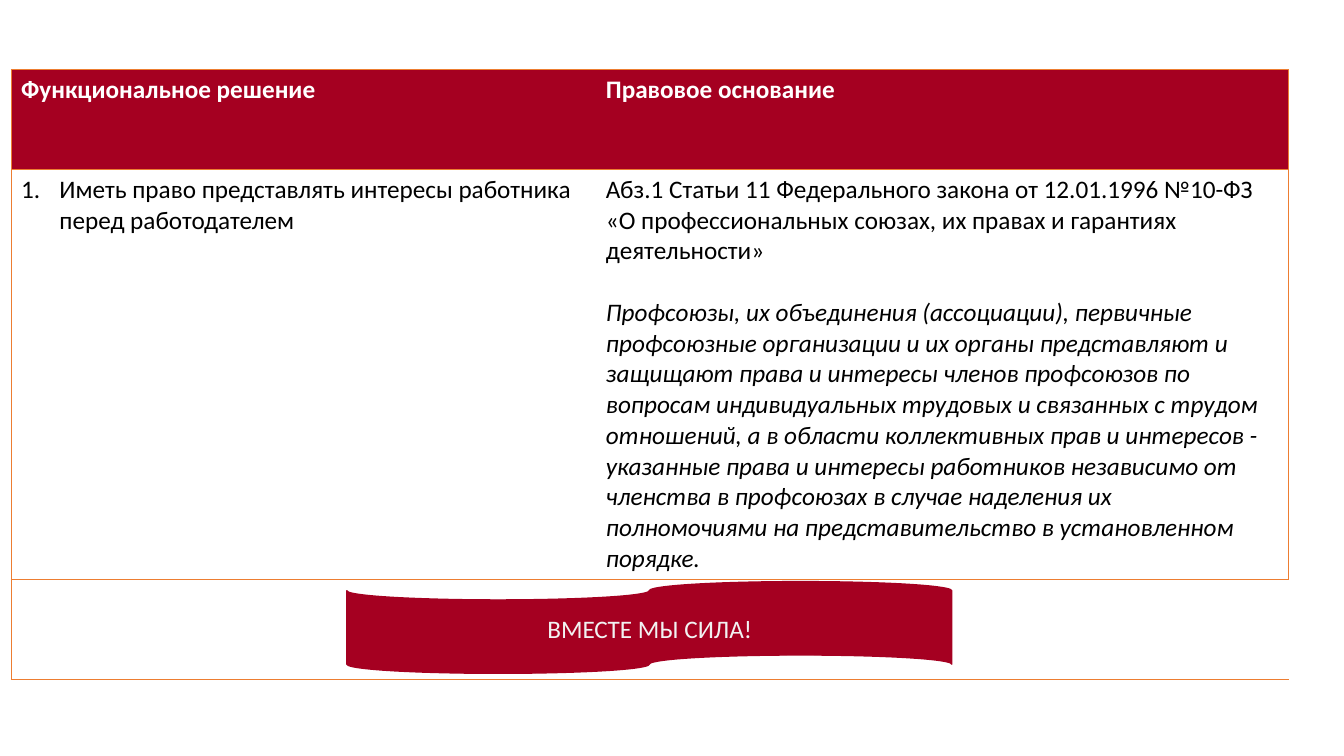
from dataclasses import dataclass

from lxml import etree
from pptx import Presentation
from pptx.dml.color import RGBColor
from pptx.enum.shapes import MSO_SHAPE
from pptx.enum.text import MSO_ANCHOR, PP_ALIGN
from pptx.oxml.ns import qn
from pptx.util import Inches, Pt

PUNCHED_TAPE = MSO_SHAPE.FLOWCHART_PUNCHED_TAPE
MIDDLE = MSO_ANCHOR.MIDDLE
LEFT = PP_ALIGN.LEFT
CENTER = PP_ALIGN.CENTER


@dataclass(frozen=True)
class Theme:
    font: str = "Calibri"
    text_size: float = 18
    crimson: str = "A50021"
    border: str = "ED7D31"
    border_width: float = 0.5
    white: str = "FFFFFF"
    black: str = "000000"
    pale: str = "F2F2F2"


class SlideBuilder:
    def __init__(self, slide, theme):
        self.slide = slide
        self.theme = theme

    def add_ribbon(self, left, top, width, height):
        shape = self.slide.shapes.add_shape(
            PUNCHED_TAPE, Inches(left), Inches(top), Inches(width), Inches(height)
        )
        shape.shadow.inherit = False
        shape.fill.solid()
        shape.fill.fore_color.rgb = RGBColor.from_string(self.theme.crimson)
        shape.line.color.rgb = RGBColor.from_string(self.theme.crimson)
        shape.line.width = Pt(1)

    def add_table(self, left, top, column_widths, row_heights):
        table = self.slide.shapes.add_table(
            len(row_heights), len(column_widths), Inches(left), Inches(top),
            Inches(sum(column_widths)), Inches(sum(row_heights)),
        ).table
        table.first_row = False
        table.horz_banding = False
        for column, width in zip(table.columns, column_widths):
            column.width = Inches(width)
        for row, height in zip(table.rows, row_heights):
            row.height = Inches(height)
        return table

    def style_cell(self, cell, edges, fill=None):
        properties = cell._tc.get_or_add_tcPr()
        for edge in "LRTB":
            line = etree.SubElement(properties, qn(f"a:ln{edge}"))
            if edge in edges:
                line.set("w", str(Pt(self.theme.border_width)))
                solid = etree.SubElement(line, qn("a:solidFill"))
                etree.SubElement(solid, qn("a:srgbClr"), val=self.theme.border)
            else:
                etree.SubElement(line, qn("a:noFill"))
        if fill:
            cell.fill.solid()
            cell.fill.fore_color.rgb = RGBColor.from_string(fill)
        else:
            cell.fill.background()

    def add_text(self, paragraph, text, color, bold=False, italic=False, align=LEFT):
        paragraph.alignment = align
        run = paragraph.add_run()
        run.text = text
        run.font.name = self.theme.font
        run.font.size = Pt(self.theme.text_size)
        run.font.bold = bold
        run.font.italic = italic
        run.font.color.rgb = RGBColor.from_string(color)

    def number(self, paragraph, indent):
        properties = paragraph._p.get_or_add_pPr()
        properties.set("marL", str(Inches(indent)))
        properties.set("indent", str(Inches(-indent)))
        etree.SubElement(properties, qn("a:buFont"), typeface="+mj-lt")
        etree.SubElement(properties, qn("a:buAutoNum"), type="arabicPeriod")


def main():
    theme = Theme()
    presentation = Presentation()
    presentation.slide_width = Inches(13.33)
    presentation.slide_height = Inches(7.5)
    slide = presentation.slides.add_slide(presentation.slide_layouts[6])
    builder = SlideBuilder(slide, theme)

    builder.add_ribbon(3.44, 5.77, 6, 0.91)
    table = builder.add_table(0.11, 0.69, [5.8, 6.87], [0.99, 4.07, 0.99])
    for column, side in enumerate("LR"):
        builder.style_cell(table.cell(0, column), "TB" + side, theme.crimson)
        for row in (1, 2):
            builder.style_cell(table.cell(row, column), "TB" + side)

    for column, heading in enumerate(["Функциональное решение", "Правовое основание"]):
        paragraph = table.cell(0, column).text_frame.paragraphs[0]
        builder.add_text(paragraph, heading, theme.white, bold=True)

    solution = table.cell(1, 0).text_frame.paragraphs[0]
    builder.add_text(
        solution,
        "Иметь право представлять интересы работника перед работодателем",
        theme.black,
    )
    builder.number(solution, 0.38)

    legal_basis = table.cell(1, 1).text_frame
    builder.add_text(
        legal_basis.paragraphs[0],
        "Абз.1 Статьи 11 Федерального закона от 12.01.1996 №10-ФЗ "
        "«О профессиональных союзах, их правах и гарантиях деятельности»",
        theme.black,
    )
    quotation = legal_basis.add_paragraph()
    quotation.space_before = Pt(22)
    builder.add_text(
        quotation,
        "Профсоюзы, их объединения (ассоциации), первичные профсоюзные "
        "организации и их органы представляют и защищают права и интересы "
        "членов профсоюзов по вопросам индивидуальных трудовых и связанных "
        "с трудом отношений, а в области коллективных прав и интересов - "
        "указанные права и интересы работников независимо от членства в "
        "профсоюзах в случае наделения их полномочиями на представительство "
        "в установленном порядке.",
        theme.black,
        italic=True,
    )

    slogan = table.cell(2, 0)
    slogan.merge(table.cell(2, 1))
    slogan.vertical_anchor = MIDDLE
    builder.add_text(
        slogan.text_frame.paragraphs[0], "ВМЕСТЕ МЫ СИЛА!", theme.pale, align=CENTER
    )
    presentation.save("out.pptx")


if __name__ == "__main__":
    main()
